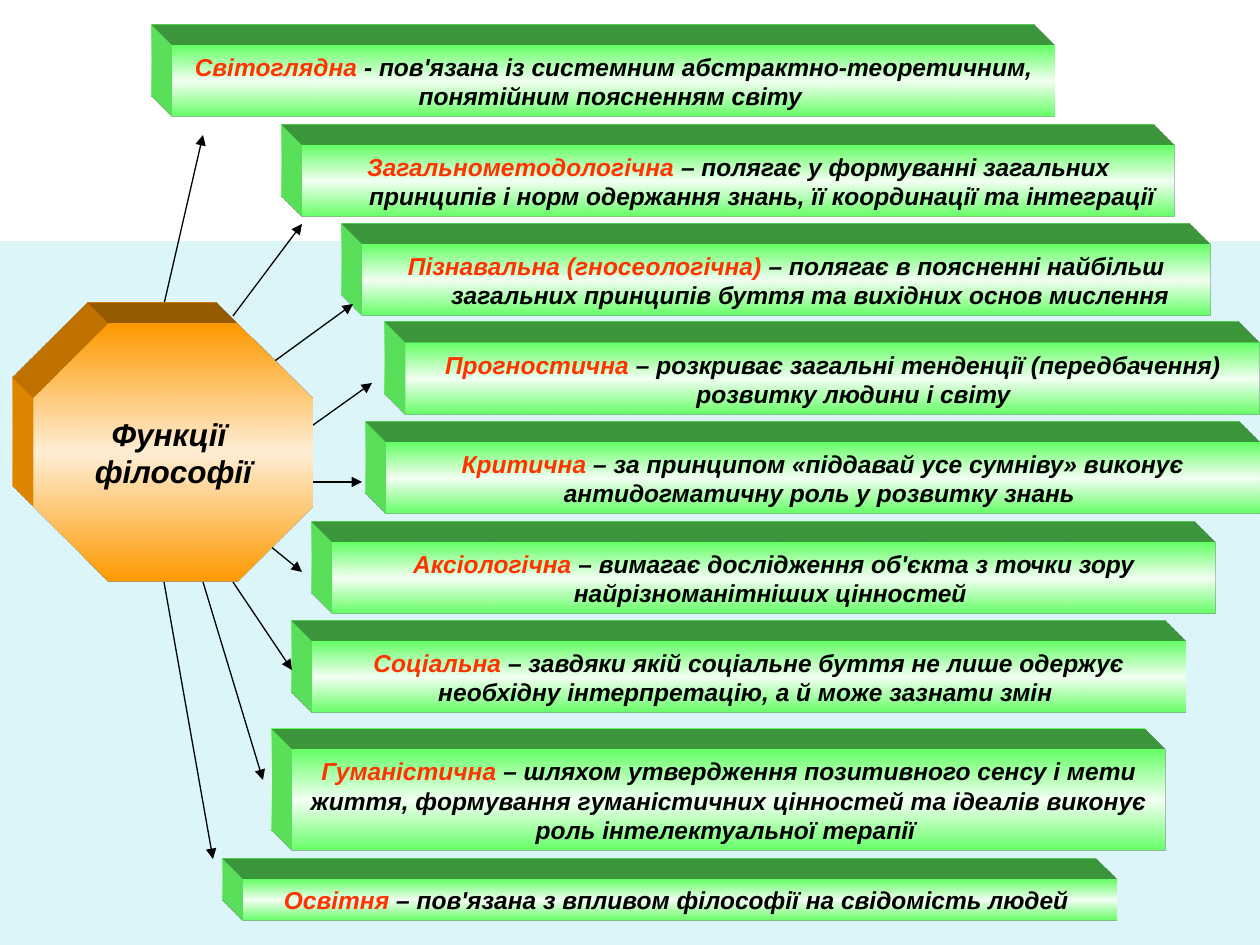
"""Builds a slide on the functions of philosophy: an octagon with arrows to nine extruded bars."""
import copy

import pptx
import pptx.dml.color
import pptx.enum.shapes
import pptx.enum.text
import pptx.oxml
import pptx.oxml.ns
import pptx.util

RGBColor = pptx.dml.color.RGBColor
SHAPES = pptx.enum.shapes.MSO_SHAPE
SCALE = 914400 / 126
PALE_BLUE = RGBColor(0xDB, 0xF5, 0xF9)
WHITE = RGBColor(0xFF, 0xFF, 0xFF)
BLACK = RGBColor(0, 0, 0)
RED = RGBColor(0xFF, 0x33, 0x00)
GREEN = RGBColor(0x66, 0xFF, 0x66)
LIGHT_GREEN = RGBColor(0xF2, 0xFF, 0xF2)
ORANGE = RGBColor(0xFF, 0x99, 0x00)
LIGHT_ORANGE = RGBColor(0xFF, 0xEE, 0xD5)
NAMESPACE = pptx.oxml.ns.nsdecls("a")
SCENE = (
    f'<a:scene3d {NAMESPACE}><a:camera prst="legacyObliqueTopLeft"/>'
    '<a:lightRig rig="legacyFlat3" dir="b"/></a:scene3d>'
)
SOLID = (
    f'<a:sp3d {NAMESPACE} extrusionH="430200" prstMaterial="legacyMatte">'
    '<a:bevelT w="13500" h="13500" prst="angle"/><a:bevelB w="13500" h="13500" prst="angle"/>'
    '<a:extrusionClr><a:srgbClr val="{color}"/></a:extrusionClr></a:sp3d>'
)


def add_block(kind, box, edge_color, middle_color):
    """Add an extruded shape with a three-stop vertical gradient."""
    shape = slide.shapes.add_shape(kind, *[round(value * SCALE) for value in box])
    shape.shadow.inherit = False
    shape.line.fill.background()
    shape.fill.gradient()
    shape.fill.gradient_angle = 90
    properties = shape._element.spPr
    stop_list = properties.find(".//" + pptx.oxml.ns.qn("a:gsLst"))
    stop_list.insert(1, copy.deepcopy(stop_list[0]))
    colors = (edge_color, middle_color, edge_color)
    for stop, color, position in zip(shape.fill.gradient_stops, colors, (0, 0.5, 1)):
        stop.color.rgb = color
        stop.position = position
    for xml in (SCENE, SOLID.format(color=edge_color)):
        properties.append(pptx.oxml.parse_xml(xml))
    shape.text_frame.vertical_anchor = pptx.enum.text.MSO_ANCHOR.MIDDLE
    return shape


def add_run(paragraph, text, size, color):
    """Add a bold italic run to a centred paragraph."""
    paragraph.alignment = pptx.enum.text.PP_ALIGN.CENTER
    run = paragraph.add_run()
    run.text = text
    run.font.color.rgb = color
    formats = {"name": "Arial", "size": pptx.util.Pt(size), "bold": True, "italic": True}
    for name, value in formats.items():
        setattr(run.font, name, value)


presentation = pptx.Presentation()
presentation.slide_width = round(1260 * SCALE)
presentation.slide_height = round(945 * SCALE)
slide = presentation.slides.add_slide(presentation.slide_layouts[6])
slide.background.fill.solid()
slide.background.fill.fore_color.rgb = PALE_BLUE

header = slide.shapes.add_shape(SHAPES.RECTANGLE, 0, 0, round(1260 * SCALE), round(239 * SCALE))
header.shadow.inherit = False
header.fill.solid()
header.fill.fore_color.rgb = WHITE
header.line.color.rgb = WHITE
header.line.width = pptx.util.Pt(2)

functions = [
    (173, 45, 882, 72, 0, "Світоглядна",
     " - пов'язана із системним абстрактно-теоретичним, понятійним поясненням світу "),
    (302, 145, 873, 72, 48, "Загальнометодологічна",
     " – полягає у формуванні загальних принципів і норм одержання знань, її координації та інтеграції"),
    (362, 244, 849, 72, 48, "Пізнавальна (гносеологічна)",
     " – полягає в поясненні найбільш загальних принципів буття та вихідних основ мислення"),
    (406, 343, 854, 72, 48, "Прогностична",
     " – розкриває загальні тенденції (передбачення) розвитку людини і світу "),
    (386, 442, 874, 72, 0, "Критична",
     " – за принципом «піддавай усе сумніву» виконує антидогматичну роль у розвитку знань "),
    (332, 542, 884, 72, 0, "Аксіологічна",
     " – вимагає дослідження об'єкта з точки зору найрізноманітніших цінностей "),
    (312, 641, 874, 72, 0, "Соціальна",
     " – завдяки якій соціальне буття не лише одержує необхідну інтерпретацію, а й може зазнати змін "),
    (292, 750, 874, 101, 0, "Гуманістична ",
     "– шляхом утвердження позитивного сенсу і мети життя, формування гуманістичних цінностей "
     "та ідеалів виконує роль інтелектуальної терапії "),
    (243, 879, 874, 42, 0, "Освітня ", "– пов'язана з впливом філософії на свідомість людей "),
]
for *box, indent, title, description in functions:
    bar = add_block(SHAPES.RECTANGLE, box, GREEN, LIGHT_GREEN)
    bar.text_frame.word_wrap = True
    paragraph = bar.text_frame.paragraphs[0]
    add_run(paragraph, title, 14, RED)
    add_run(paragraph, description, 14, BLACK)
    if indent:
        paragraph_properties = paragraph._p.get_or_add_pPr()
        paragraph_properties.set("marL", str(round(indent * SCALE)))
        paragraph_properties.set("indent", str(-round(indent * SCALE)))

arrows = [
    (164, 304, 203, 135),
    (233, 316, 302, 224),
    (272, 363, 353, 304),
    (302, 433, 372, 383),
    (292, 482, 362, 482),
    (253, 532, 302, 572),
    (233, 582, 292, 670),
    (203, 582, 263, 780),
    (164, 582, 213, 859),
]
for ends in arrows:
    arrow = slide.shapes.add_connector(
        pptx.enum.shapes.MSO_CONNECTOR.STRAIGHT, *[round(value * SCALE) for value in ends]
    )
    arrow.line.color.rgb = BLACK
    arrow.line.width = pptx.util.Pt(0.75)
    arrow.line._get_or_add_ln().append(pptx.oxml.parse_xml(f'<a:tailEnd {NAMESPACE} type="triangle"/>'))
    arrow._element.spPr.append(pptx.oxml.parse_xml(f"<a:effectLst {NAMESPACE}/>"))

octagon = add_block(SHAPES.OCTAGON, (34, 323, 279, 259), ORANGE, LIGHT_ORANGE)
octagon.adjustments[0] = 0.29
octagon.text_frame.word_wrap = False
add_run(octagon.text_frame.paragraphs[0], "Функції ", 18, BLACK)
add_run(octagon.text_frame.add_paragraph(), "філософії", 18, BLACK)

presentation.save("out.pptx")
